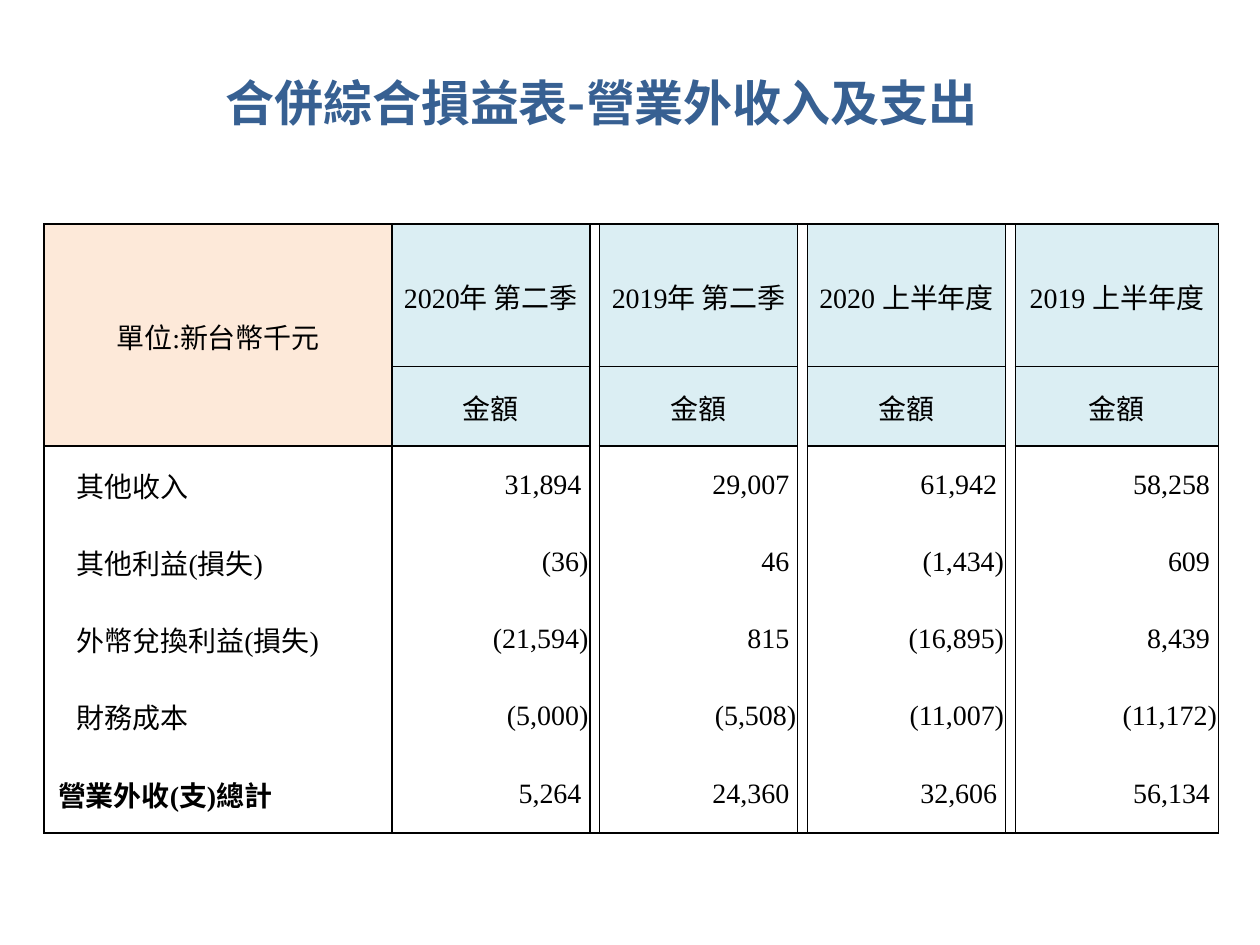
from lxml.etree import SubElement
from pptx import Presentation
from pptx.dml.color import RGBColor
from pptx.enum.text import MSO_ANCHOR as Anchor, PP_ALIGN as Align
from pptx.oxml.ns import qn
from pptx.util import Cm, Pt

TITLE_BLUE = RGBColor(0x37, 0x60, 0x92)
BLACK = RGBColor(0, 0, 0)
WHITE = RGBColor(0xFF, 0xFF, 0xFF)
PEACH = RGBColor(0xFD, 0xE9, 0xD9)
PALE_BLUE = RGBColor(0xDB, 0xEE, 0xF3)
CJK_FONT = "Noto Sans CJK SC"
TABLE_FONT = "Times New Roman"

PERIODS = ["2020年 第二季", "2019年 第二季", "2020 上半年度", "2019 上半年度"]
ITEMS = [
    ("其他收入", ["31,894", "29,007", "61,942", "58,258"]),
    ("其他利益(損失)", ["(36)", "46", "(1,434)", "609"]),
    ("外幣兌換利益(損失)", ["(21,594)", "815", "(16,895)", "8,439"]),
    ("財務成本", ["(5,000)", "(5,508)", "(11,007)", "(11,172)"]),
    ("營業外收(支)總計", ["5,264", "24,360", "32,606", "56,134"]),
]
COLUMN_WIDTHS = [7.01, 3.99, 0.2, 3.99, 0.2, 3.99, 0.2, 4.09]
ROW_HEIGHTS = [2.87, 1.6] + [1.55] * 4 + [1.6]


def add_run(paragraph, text, size, font_name, color, bold=False):
    run = paragraph.add_run()
    run.text = text
    font = run.font
    font.size, font.bold, font.name = Pt(size), bold, font_name
    font.color.rgb = color
    SubElement(font._element, qn("a:ea")).set("typeface", CJK_FONT)


def style_cell(cell, edges, fill=WHITE):
    """Draw the named edges (L, R, T, B) in black and fill the cell."""
    cell.margin_left = cell.margin_right = cell.margin_top = Cm(0.03)
    cell.margin_bottom = 0
    cell.vertical_anchor = Anchor.MIDDLE
    properties = cell._tc.get_or_add_tcPr()
    for edge in "LRTB":
        line = SubElement(properties, qn(f"a:ln{edge}"), w=str(Pt(1)))
        if edge in edges:
            solid = SubElement(line, qn("a:solidFill"))
            SubElement(solid, qn("a:srgbClr"), val=str(BLACK))
        else:
            SubElement(line, qn("a:noFill"))
    cell.fill.solid()
    cell.fill.fore_color.rgb = fill


def write_cell(cell, text, align, bold=False):
    paragraph = cell.text_frame.paragraphs[0]
    paragraph.alignment = align
    add_run(paragraph, text, 16, TABLE_FONT, BLACK, bold)


def place_title(slide, left, top, width, height):
    title = slide.shapes.title
    title.left, title.top, title.width, title.height = left, top, width, height
    frame = title.text_frame
    frame.word_wrap = True
    frame.vertical_anchor = Anchor.MIDDLE
    paragraph = frame.paragraphs[0]
    paragraph.alignment = Align.LEFT
    add_run(paragraph, "合併綜合損益表-營業外收入及支出", 28, CJK_FONT, TITLE_BLUE, True)


def place_income_table(slide, left, top, width, height):
    last_row = len(ROW_HEIGHTS) - 1
    table = slide.shapes.add_table(
        len(ROW_HEIGHTS), len(COLUMN_WIDTHS), left, top, width, height).table
    table.first_row = table.horz_banding = False
    for column, column_width in zip(table.columns, COLUMN_WIDTHS):
        column.width = Cm(column_width)
    for row, row_height in zip(table.rows, ROW_HEIGHTS):
        row.height = Cm(row_height)

    # Borders and fills: even columns after the first are narrow gaps
    for r in range(len(ROW_HEIGHTS)):
        for c in range(len(COLUMN_WIDTHS)):
            is_gap = c > 0 and c % 2 == 0
            edges, fill = "LR", WHITE
            if r < 2 and not is_gap:
                edges, fill = "LRTB", PALE_BLUE if c else PEACH
            elif r == 0 or (r == 2 and not is_gap):
                edges = "LRT"
            elif r == last_row:
                edges = "LRB"
            style_cell(table.cell(r, c), edges, fill)

    # Header
    table.cell(0, 0).merge(table.cell(1, 0))
    write_cell(table.cell(0, 0), "單位:新台幣千元", Align.CENTER)
    for i, period in enumerate(PERIODS):
        write_cell(table.cell(0, 2 * i + 1), period, Align.CENTER)
        write_cell(table.cell(1, 2 * i + 1), "金額", Align.CENTER)

    # Items and amounts; closing brackets hang to the right of the digits
    for r, (label, amounts) in enumerate(ITEMS, start=2):
        is_total = r == last_row
        label_cell = table.cell(r, 0)
        label_cell.margin_left = Cm(0.28 if is_total else 0.66)
        write_cell(label_cell, label, Align.LEFT, is_total)
        for i, amount in enumerate(amounts):
            cell = table.cell(r, 2 * i + 1)
            cell.margin_right = Cm(0.03 if amount.endswith(")") else 0.17)
            write_cell(cell, amount, Align.RIGHT)


def main():
    presentation = Presentation()
    presentation.slide_width, presentation.slide_height = Cm(25.4), Cm(19.05)
    slide = presentation.slides.add_slide(presentation.slide_layouts[5])
    place_title(slide, Cm(4.29), Cm(1.32), Cm(20.6), Cm(1.45))
    place_income_table(slide, Cm(0.89), Cm(4.52),
                       Cm(sum(COLUMN_WIDTHS)), Cm(sum(ROW_HEIGHTS)))
    presentation.save("out.pptx")


if __name__ == "__main__":
    main()
